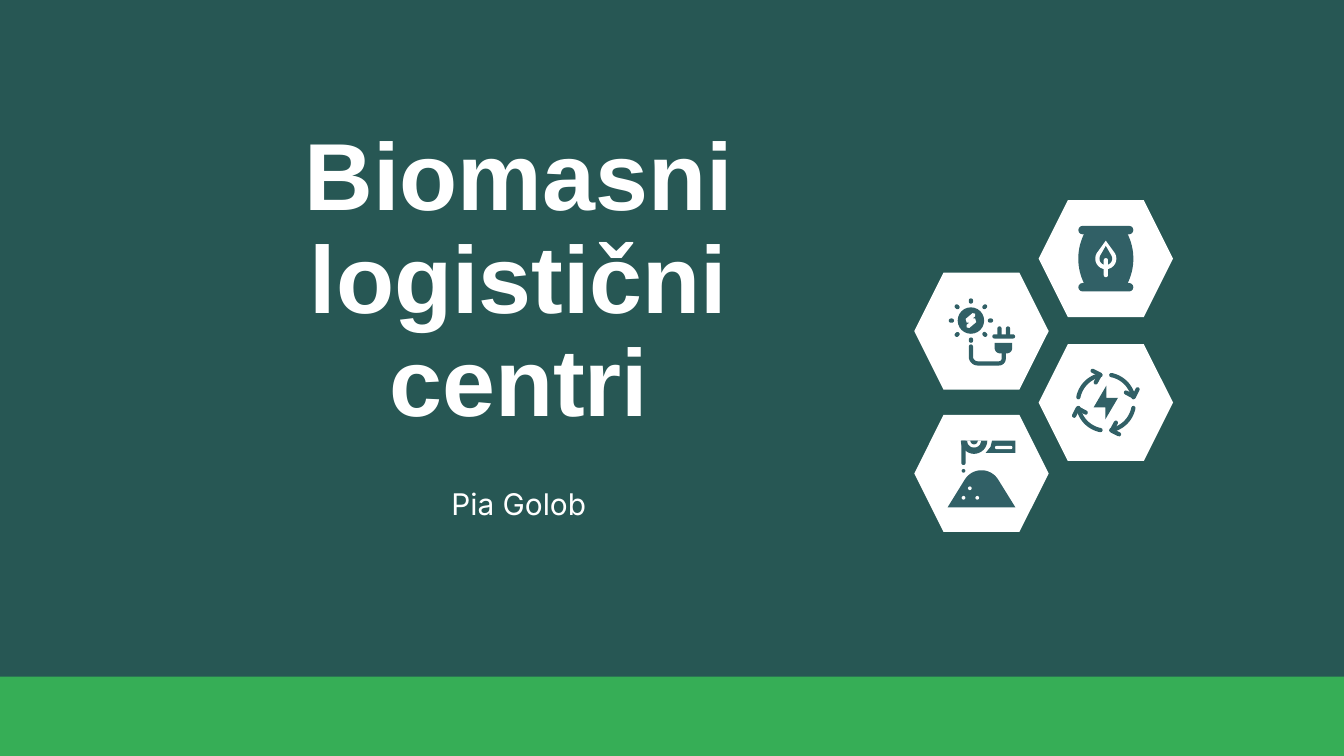
from dataclasses import dataclass
from math import cos, radians, sin

from pptx import Presentation
from pptx.dml.color import RGBColor
from pptx.enum.shapes import MSO_SHAPE
from pptx.enum.text import MSO_ANCHOR, PP_ALIGN
from pptx.oxml.ns import qn
from pptx.util import Cm, Pt

COLORS = {
    "background": "275754",
    "band": "36AE56",
    "white": "FFFFFF",
    "icon": "316066",
}
STROKE = 0.08


def rgb(name):
    return RGBColor.from_string(COLORS[name])


def paint(sp, color):
    sp.shadow.inherit = False
    sp.fill.solid()
    sp.fill.fore_color.rgb = rgb(color)
    sp.line.fill.background()
    return sp


def add_text(slide, box, text, size, font, bold=False, anchor=MSO_ANCHOR.TOP, spacing=1.0):
    tf = slide.shapes.add_textbox(*map(Cm, box)).text_frame
    tf.word_wrap = True
    tf.vertical_anchor = anchor
    tf.margin_left = tf.margin_right = tf.margin_top = tf.margin_bottom = Cm(0.25)
    p = tf.paragraphs[0]
    p.text = text
    p.alignment = PP_ALIGN.CENTER
    p.line_spacing = spacing
    p.font.size = Pt(size)
    p.font.name = font
    p.font.bold = bold
    p.font.color.rgb = rgb("white")


def arc(x, y, radius, start, end, steps=16):
    """Points on a circle; degrees run clockwise from the right."""
    angles = [radians(start + (end - start) * i / steps) for i in range(steps + 1)]
    return [(x + radius * cos(a), y + radius * sin(a)) for a in angles]


def mirrored(half):
    """Complete an outline that is symmetric about its centre."""
    return half + [(-x, -y) for x, y in half]


def turned(points, quarters):
    for _ in range(quarters):
        points = [(-y, x) for x, y in points]
    return points


@dataclass
class Icon:
    """Draws in centimetres from the centre of its hexagon."""
    shapes: object
    x: float
    y: float

    def preset(self, kind, x, y, width, height, color="icon"):
        """Add a preset shape centred on x, y."""
        left, top = self.x + x - width / 2, self.y + y - height / 2
        return paint(self.shapes.add_shape(kind, Cm(left), Cm(top), Cm(width), Cm(height)), color)

    def bar(self, x, y, width, height, color="icon"):
        sp = self.preset(MSO_SHAPE.ROUNDED_RECTANGLE, x, y, width, height, color)
        sp.adjustments[0] = 0.5
        return sp

    def dot(self, x, y, size, color="icon"):
        self.preset(MSO_SHAPE.OVAL, x, y, size, size, color)

    def outline(self, points, color="icon", close=True):
        first, *rest = [(Cm(self.x + x), Cm(self.y + y)) for x, y in points]
        builder = self.shapes.build_freeform(*first)
        builder.add_line_segments(rest, close=close)
        return paint(builder.convert_to_shape(), color)

    def stroke(self, points):
        sp = self.outline(points, close=False)
        sp.fill.background()
        sp.line.color.rgb = rgb("icon")
        sp.line.width = Cm(STROKE)
        sp._element.spPr.find(qn("a:ln")).set("cap", "rnd")


def draw_solar_plug(icon):
    sun_x = sun_y = -0.2
    icon.dot(sun_x, sun_y, 0.5)
    for angle in range(0, 360, 45):
        x, y = arc(sun_x, sun_y, 0.37, angle, angle, 1)[0]
        icon.bar(x, y, 0.1, STROKE).rotation = angle
    bolt = mirrored([(0.1, 0.03), (-0.03, 0.14), (-0.08, 0.13),
                     (-0.08, 0.08), (-0.03, 0.04), (-0.08, 0.04)])
    icon.outline([(sun_x + x, sun_y + y) for x, y in bolt], "white")
    icon.stroke([(-0.2, 0.29), *arc(-0.07, 0.48, 0.13, 180, 90),
                 *arc(0.33, 0.52, 0.09, 90, 0), (0.42, 0.42)])
    icon.outline([(0.25, 0.22), (0.58, 0.22), *arc(0.48, 0.32, 0.1, 0, 90),
                  *arc(0.35, 0.32, 0.1, 90, 180)])
    icon.bar(0.42, 0.1, 0.43, STROKE)
    for x in (0.34, 0.5):
        icon.bar(x, 0.01, STROKE, 0.2)


def draw_pile(icon):
    icon.outline([(-0.64, 0.64), *arc(0, 0.31, 0.37, 213, 327), (0.64, 0.64)])
    for x, y in ((-0.08, 0.46), (-0.22, 0.28), (-0.34, 0.46)):
        icon.dot(x, y, 0.07, "white")
    icon.dot(-0.34, -0.05, 0.07)
    icon.outline([(-0.38, -0.62), (-0.3, -0.62), *arc(-0.34, -0.2, 0.04, 0, 180)])
    for radius, color in ((0.25, "icon"), (0.13, "white"), (0.07, "icon")):
        icon.outline(arc(-0.14, -0.62, radius, 0, 180), color)
    icon.outline([(0.2, -0.62), (0.64, -0.62), (0.64, -0.39), (0.08, -0.39), (0.17, -0.5)])
    icon.bar(0.42, -0.49, 0.33, 0.06, "white")


def draw_energy_cycle(icon):
    for quarters in range(4):
        icon.stroke(turned(arc(0, 0, 0.53, 191, 259), quarters))
        icon.stroke(turned([(-0.25, -0.6), (-0.11, -0.53), (-0.19, -0.38)], quarters))
    icon.outline(mirrored([(0.01, -0.09), (0.01, -0.32), (-0.23, 0.09)]))


def draw_sack(icon):
    icon.outline(arc(0.54, 0, 1.06, 153.7, 206.3) + arc(-0.54, 0, 1.06, -26.3, 26.3))
    for y in (-0.54, 0.54):
        icon.bar(0, y, 1.04, 0.16)
    for tip, radius, color in ((-0.34, 0.2, "white"), (-0.24, 0.12, "icon")):
        icon.outline([(0, tip), *arc(0, 0, radius, -30, 210)], color)
    icon.bar(0, 0.17, STROKE, 0.36, "white")


def main():
    prs = Presentation()
    prs.slide_width, prs.slide_height = Cm(25.4), Cm(14.29)
    slide = prs.slides.add_slide(prs.slide_layouts[6])
    slide.background.fill.solid()
    slide.background.fill.fore_color.rgb = rgb("background")
    paint(slide.shapes.add_shape(MSO_SHAPE.RECTANGLE, 0, Cm(12.79), Cm(25.4), Cm(1.5)), "band")

    add_text(slide, (4.24, 2.62, 11.13, 5.89), "Biomasni logistični centri", 51, "Arial",
             bold=True, anchor=MSO_ANCHOR.BOTTOM, spacing=0.9)
    add_text(slide, (4.24, 8.94, 11.13, 1.5), "Pia Golob", 16, "Inter")

    left, right = 18.55, 20.9
    for draw, x, y in ((draw_solar_plug, left, 6.26), (draw_pile, left, 8.95),
                       (draw_energy_cycle, right, 7.61), (draw_sack, right, 4.89)):
        icon = Icon(slide.shapes.add_group_shape().shapes, x, y)
        icon.preset(MSO_SHAPE.HEXAGON, 0, 0, 2.54, 2.21, "white")
        draw(icon)
    prs.save("out.pptx")


if __name__ == "__main__":
    main()
